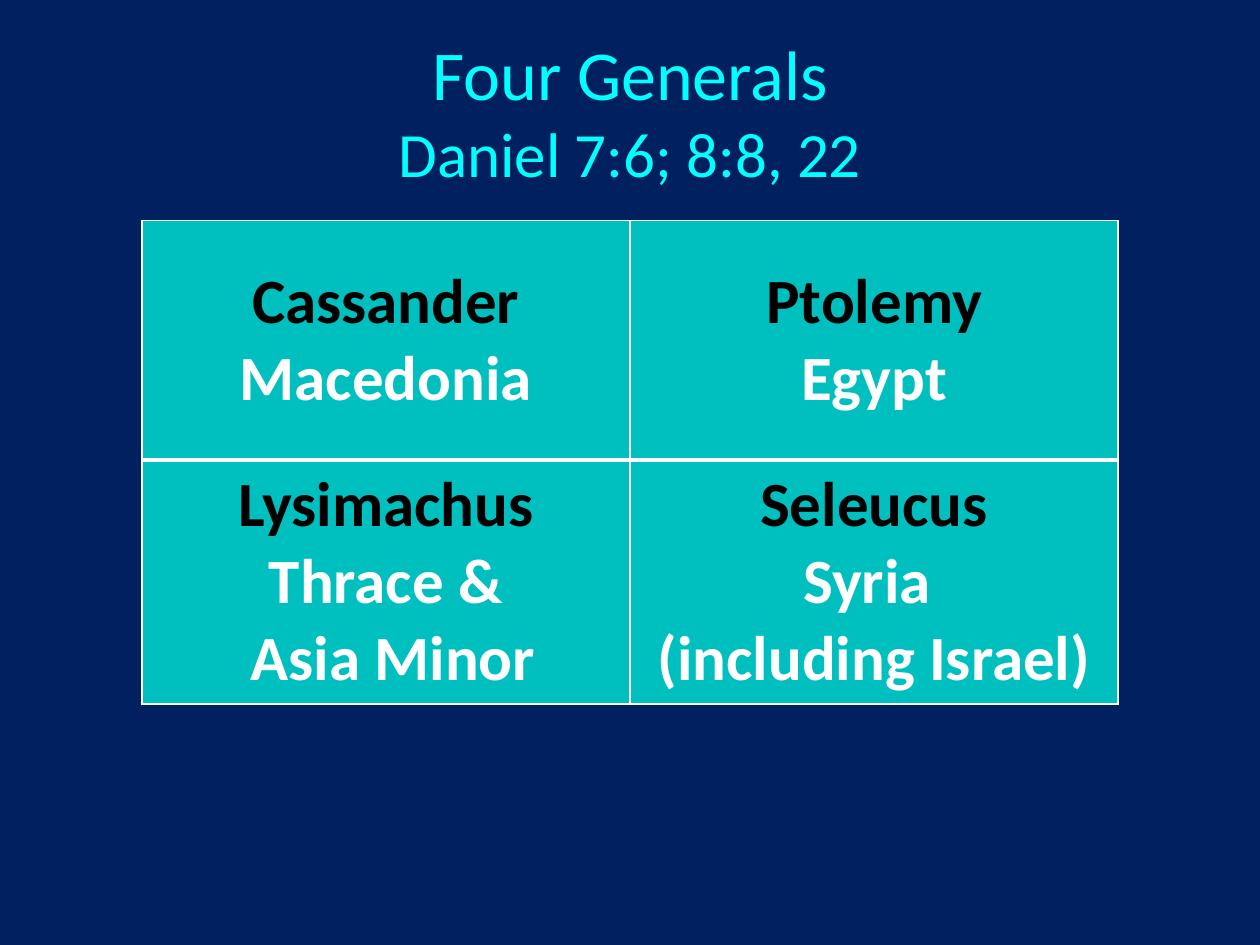
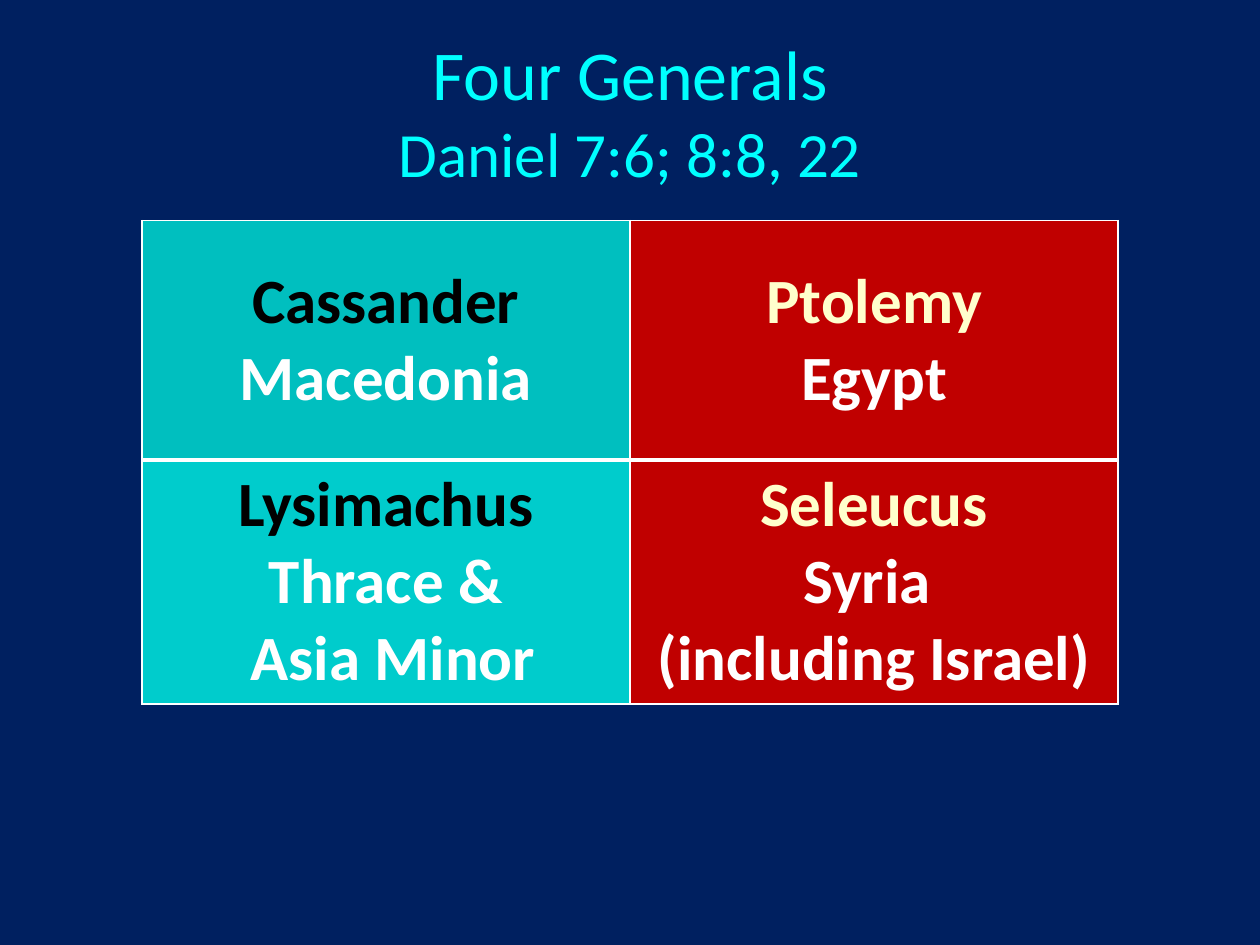
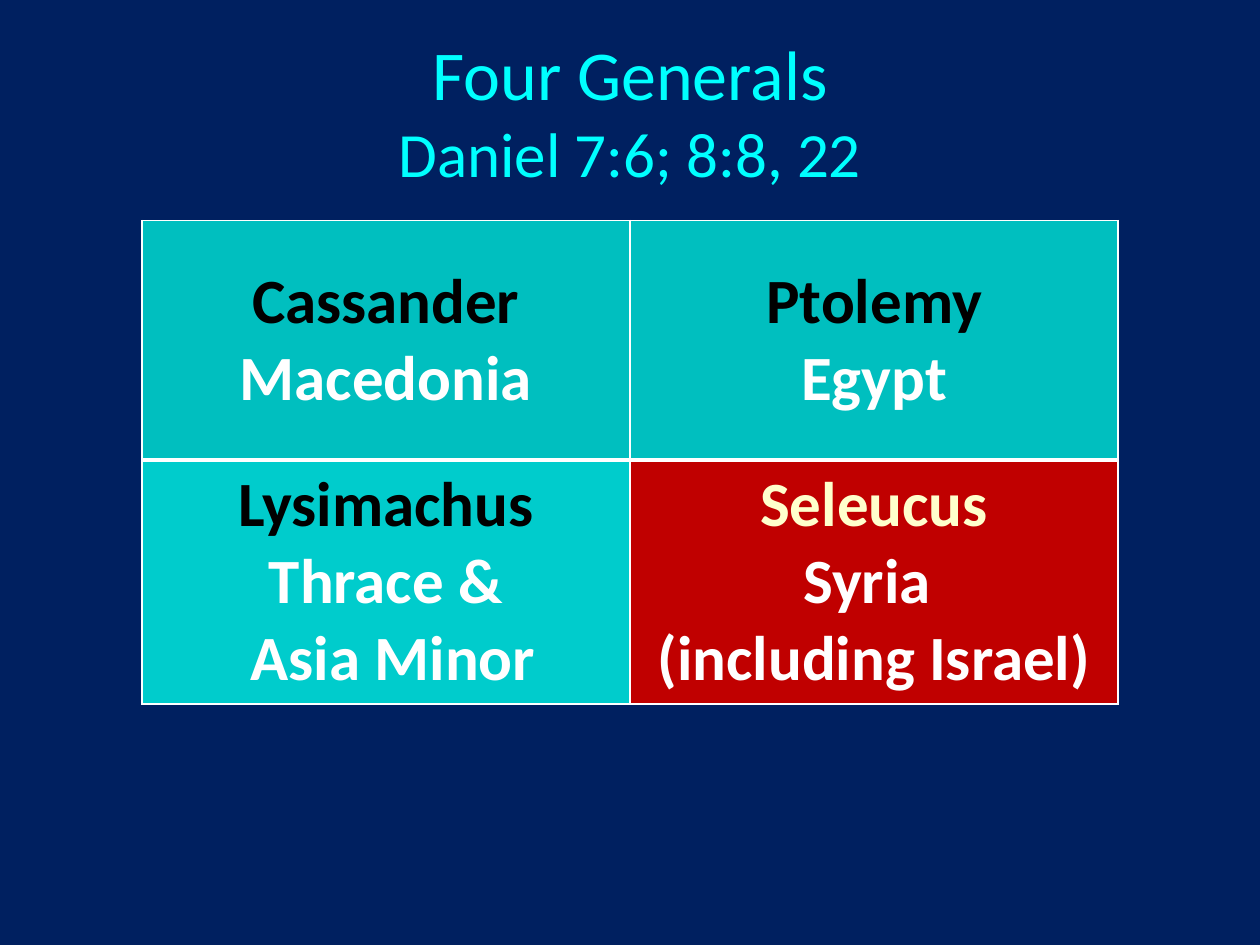
from dataclasses import dataclass

from lxml.etree import SubElement
from pptx import Presentation
from pptx.dml.color import RGBColor as RGB
from pptx.enum.text import MSO_ANCHOR as Anchor, MSO_AUTO_SIZE as AutoSize, PP_ALIGN as Align
from pptx.oxml.ns import qn
from pptx.util import Pt


@dataclass(frozen=True)
class Theme:
    font: str = "Calibri"
    heading_size: int = 40
    text_size: int = 36
    background: str = "002060"
    heading: str = "00FFFF"
    border: str = "FFFFFF"
    region: str = "FFFFFF"
    thin: int = 1
    thick: int = 3


@dataclass(frozen=True)
class CellStyle:
    fill: str
    general: str


@dataclass(frozen=True)
class Box:
    left: float
    top: float
    width: float
    height: float

    def lengths(self):
        return [Pt(n) for n in (self.left, self.top, self.width, self.height)]


THEME = Theme()
TEAL = CellStyle("00BFBF", "000000")
BRIGHT = CellStyle("00CCCC", "000000")
RED = CellStyle("C00000", "FFFFCC")

SLIDE_WIDTH, SLIDE_HEIGHT = 720, 540
TITLE_BOX = Box(185, 18, 350, 90)
TABLE_BOX = Box(81, 126, 558, 273.6)

GENERALS = [
    [("Cassander", "Macedonia"), ("Ptolemy", "Egypt")],
    [("Lysimachus", "Thrace &", " Asia Minor"), ("Seleucus", "Syria ", "(including Israel)")],
]
SLIDE_STYLES = [
    [[TEAL, TEAL], [TEAL, TEAL]],
    [[TEAL, RED], [BRIGHT, RED]],
    [[TEAL, TEAL], [BRIGHT, RED]],
]


def format_paragraph(paragraph, size, color, bold):
    paragraph.alignment = Align.CENTER
    font = paragraph.font
    font.name, font.size, font.bold = THEME.font, Pt(size), bold
    font.color.rgb = RGB.from_string(color)


def add_heading(slide, box):
    title = slide.shapes.title
    title.left, title.top, title.width, title.height = box.lengths()
    frame = title.text_frame
    frame.auto_size = AutoSize.NONE
    frame.word_wrap = True
    frame.vertical_anchor = Anchor.MIDDLE
    paragraph = frame.paragraphs[0]
    format_paragraph(paragraph, THEME.heading_size, THEME.heading, False)
    paragraph.add_run().text = "Four Generals"
    paragraph.add_line_break()
    passage = paragraph.add_run()
    passage.text = "Daniel 7:6; 8:8, 22"
    passage.font.size = Pt(THEME.text_size)


def set_borders(cell, widths):
    properties = cell._tc.get_or_add_tcPr()
    for side, width in widths.items():
        line = SubElement(properties, qn(f"a:ln{side}"), w=str(Pt(width)))
        fill = SubElement(line, qn("a:solidFill"))
        SubElement(fill, qn("a:srgbClr"), val=THEME.border)


def fill_cell(cell, lines, style):
    cell.fill.solid()
    cell.fill.fore_color.rgb = RGB.from_string(style.fill)
    cell.vertical_anchor = Anchor.MIDDLE
    frame = cell.text_frame
    for index, line in enumerate(lines):
        paragraph = frame.add_paragraph() if index else frame.paragraphs[0]
        paragraph.add_run().text = line
        color = THEME.region if index else style.general
        format_paragraph(paragraph, THEME.text_size, color, True)


def add_generals(slide, box, styles):
    rows, columns = len(GENERALS), len(GENERALS[0])
    table = slide.shapes.add_table(rows, columns, *box.lengths()).table
    table.first_row = table.horz_banding = False
    for row, generals in enumerate(GENERALS):
        top = THEME.thick if row else THEME.thin
        bottom = THEME.thick if row < rows - 1 else THEME.thin
        for column, lines in enumerate(generals):
            cell = table.cell(row, column)
            set_borders(cell, {"L": THEME.thin, "R": THEME.thin, "T": top, "B": bottom})
            fill_cell(cell, lines, styles[row][column])


def main():
    deck = Presentation()
    deck.slide_width, deck.slide_height = Pt(SLIDE_WIDTH), Pt(SLIDE_HEIGHT)
    backdrop = deck.slide_master.background.fill
    backdrop.solid()
    backdrop.fore_color.rgb = RGB.from_string(THEME.background)
    title_only = deck.slide_layouts.get_by_name("Title Only")
    for styles in SLIDE_STYLES:
        slide = deck.slides.add_slide(title_only)
        add_heading(slide, TITLE_BOX)
        add_generals(slide, TABLE_BOX, styles)
    deck.save("out.pptx")


if __name__ == "__main__":
    main()
